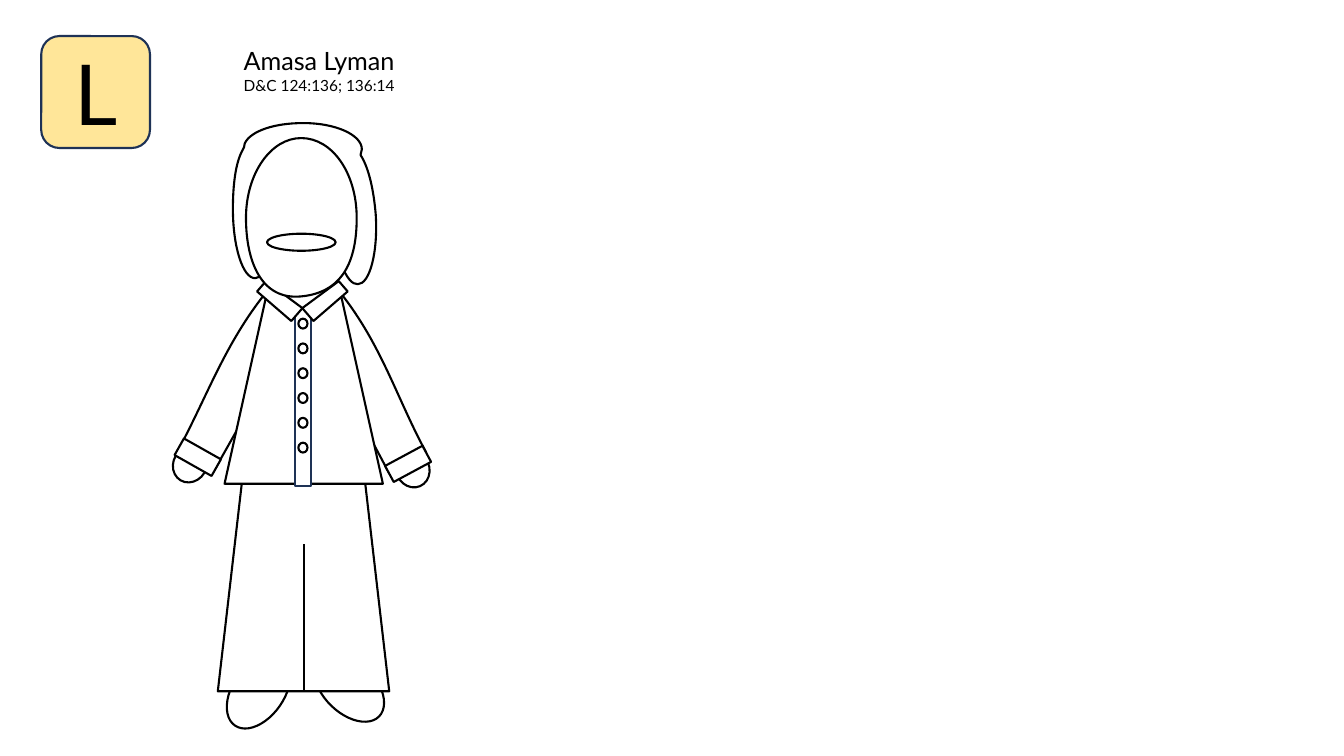
from math import cos, radians, sin

from lxml import etree
from pptx import Presentation
from pptx.dml.color import RGBColor
from pptx.enum.shapes import MSO_CONNECTOR, MSO_SHAPE
from pptx.enum.text import MSO_AUTO_SIZE, PP_ALIGN
from pptx.oxml.ns import qn
from pptx.util import Cm, Pt

BLACK = RGBColor(0x00, 0x00, 0x00)
WHITE = RGBColor(0xFF, 0xFF, 0xFF)
NAVY = RGBColor(0x1E, 0x32, 0x56)
CREAM = RGBColor(0xFF, 0xE6, 0x99)

ELLIPSE = MSO_SHAPE.OVAL
RECTANGLE = MSO_SHAPE.RECTANGLE
ROUNDED = MSO_SHAPE.ROUNDED_RECTANGLE
TRAPEZOID = MSO_SHAPE.TRAPEZOID
COLLAR = MSO_SHAPE.FLOWCHART_MANUAL_INPUT
STRAIGHT = MSO_CONNECTOR.STRAIGHT
FIT_SHAPE = MSO_AUTO_SIZE.SHAPE_TO_FIT_TEXT
LEFT = PP_ALIGN.LEFT
CENTER = PP_ALIGN.CENTER

FONT = "Lato"
OUTLINE = Pt(1.5)
BUTTON_COUNT = 6
BUTTON_PITCH = 0.625

# Outlines in cm from the figure's corner: a pair of numbers is a straight
# step, a triple of points is a Bezier curve
HAIR = [
    (3.35, 0.10),
    ((4.16, 0.10), (4.82, 0.40), (4.82, 0.76)),
    ((4.82, 0.81), (4.82, 0.84), (4.79, 0.89)),
    (4.79, 0.91), (4.82, 0.96),
    ((5.00, 1.27), (5.12, 1.80), (5.17, 2.41)),
    ((5.23, 3.35), (5.02, 4.16), (4.72, 4.16)),
    ((4.44, 4.19), (4.13, 3.43), (4.06, 2.46)),
    ((4.03, 2.11), (4.06, 1.78), (4.08, 1.50)),
    (4.13, 1.29), (3.93, 1.34),
    ((3.75, 1.37), (3.55, 1.39), (3.35, 1.39)),
    ((3.14, 1.39), (2.94, 1.37), (2.76, 1.32)),
    (2.56, 1.27), (2.56, 1.29),
    ((2.63, 1.57), (2.66, 1.90), (2.66, 2.26)),
    ((2.69, 3.22), (2.43, 4.01), (2.13, 4.01)),
    ((1.82, 4.01), (1.57, 3.22), (1.57, 2.26)),
    ((1.57, 1.65), (1.64, 1.11), (1.80, 0.81)),
    (1.85, 0.71), (1.87, 0.61),
    ((2.02, 0.30), (2.61, 0.10), (3.35, 0.10)),
]
RIGHT_ARM = [
    (5.50, 8.91), (3.35, 4.87), (4.29, 4.39),
    ((5.33, 5.71), (5.71, 7.06), (6.44, 8.40)), (5.50, 8.91),
]
LEFT_ARM = [
    (1.08, 8.89), (3.35, 4.87), (2.43, 4.34),
    ((1.36, 5.66), (0.91, 7.03), (0.17, 8.38)), (1.08, 8.89),
]
FACE = [
    (1.90, 2.49),
    ((1.90, 1.37), (2.53, 0.48), (3.29, 0.48)),
    ((4.08, 0.48), (4.69, 1.37), (4.69, 2.49)),
    ((4.69, 3.58), (4.34, 4.37), (3.29, 4.47)),
    ((2.28, 4.57), (1.90, 3.58), (1.90, 2.49)),
]


def paint(shape, fill=WHITE, line=BLACK):
    shape.shadow.inherit = False
    shape.fill.solid()
    shape.fill.fore_color.rgb = fill
    shape.line.color.rgb = line
    shape.line.width = OUTLINE


def add_part(parent, kind, left, top, width, height, turn=0, inset=None,
             mirror=False, **colours):
    shape = parent.shapes.add_shape(kind, Cm(left), Cm(top), Cm(width), Cm(height))
    shape.rotation = turn
    if inset is not None:
        shape.adjustments[0] = inset
    if mirror:
        shape._element.spPr.find(qn("a:xfrm")).set("flipH", "1")
    paint(shape, **colours)


def add_text(parent, left, top, width, height, lines, align=LEFT, color=BLACK):
    """Write (text, size) lines, one paragraph each."""
    box = parent.shapes.add_textbox(Cm(left), Cm(top), Cm(width), Cm(height))
    frame = box.text_frame
    frame.word_wrap = True
    frame.auto_size = FIT_SHAPE
    for index, (text, size) in enumerate(lines):
        para = frame.add_paragraph() if index else frame.paragraphs[0]
        para.alignment = align
        span = para.add_run()
        span.text = text
        span.font.name = FONT
        span.font.size = Pt(size)
        span.font.color.rgb = color


def rotate(x, y, degrees):
    angle = radians(degrees)
    return x * cos(angle) - y * sin(angle), x * sin(angle) + y * cos(angle)


def add_outline(parent, left, top, steps, turn=0):
    """Draw the steps in a frame that is turned by the given degrees."""
    points = []
    for step in steps:
        points.extend(step if len(step) == 3 else [step])
    points = [rotate(Cm(left + x), Cm(top + y), -turn) for x, y in points]
    builder = parent.shapes.build_freeform(*points[0], scale=1.0)
    builder.add_line_segments(points[1:], close=True)
    shape = builder.convert_to_shape()

    # Join each triple of line ends into one curve
    lines = iter(list(shape._element.iter(qn("a:lnTo"))))
    for step in steps[1:]:
        line = next(lines)
        if len(step) == 3:
            curve = etree.Element(qn("a:cubicBezTo"))
            line.addprevious(curve)
            for end in (line, next(lines), next(lines)):
                curve.append(end[0])
                end.getparent().remove(end)

    # Turn the frame back about its own centre
    center_x, center_y = rotate(shape.left + shape.width / 2,
                                shape.top + shape.height / 2, turn)
    shape.left = round(center_x - shape.width / 2)
    shape.top = round(center_y - shape.height / 2)
    shape.rotation = turn
    paint(shape)


def add_badge(page, left, top, width, height):
    badge = page.shapes.add_group_shape()
    add_part(badge, ROUNDED, left, top, width, height, fill=CREAM, line=NAVY)
    letter_width = 1.63
    add_text(badge, left + (width - letter_width) / 2, top, letter_width, height,
             [("L", 60)], align=CENTER)


def add_figure(page, left, top):
    figure = page.shapes.add_group_shape()

    def part(kind, x, y, width, height, **options):
        add_part(figure, kind, left + x, top + y, width, height, **options)

    # Hair, shoes and hands
    add_outline(figure, left, top, HAIR, turn=266.2)
    part(ELLIPSE, 3.85, 13.26, 1.3, 2.11, turn=314.4)
    part(ELLIPSE, 1.57, 13.36, 1.3, 2.11, turn=34.6)
    part(ELLIPSE, 5.68, 8.35, 0.84, 0.94, turn=336.9)
    part(ELLIPSE, 0.07, 8.23, 0.84, 0.94, turn=30.6)

    # Trousers with their seam
    part(TRAPEZOID, 1.19, 8.43, 4.32, 5.99, inset=0.16)
    seam_x = Cm(left + 3.35)
    seam = figure.shapes.add_connector(STRAIGHT, seam_x, Cm(top + 14.42),
                                       seam_x, Cm(top + 10.72))
    seam.line.color.rgb = BLACK
    seam.line.width = OUTLINE
    etree.SubElement(seam._element.spPr, qn("a:effectLst"))

    # Sleeves and cuffs
    add_outline(figure, left, top, RIGHT_ARM, turn=331.7)
    part(TRAPEZOID, 5.45, 8.46, 1.07, 0.46, turn=331.7, inset=0)
    add_outline(figure, left, top, LEFT_ARM, turn=29.4)
    part(TRAPEZOID, 0.15, 8.28, 1.07, 0.48, turn=29.4, inset=0, mirror=True)

    # Shirt, neck, collar and buttons
    part(TRAPEZOID, 1.36, 4.34, 3.99, 4.85, inset=0.27)
    part(RECTANGLE, 3.14, 4.7, 0.41, 4.55, line=NAVY)
    part(ELLIPSE, 2.46, 3.4, 1.7, 1.37)
    part(COLLAR, 2.18, 4.34, 1.14, 0.43, turn=40.8)
    part(COLLAR, 3.32, 4.34, 1.14, 0.43, turn=319.2, mirror=True)
    for index in range(BUTTON_COUNT):
        part(ELLIPSE, 3.22, 5.03 + index * BUTTON_PITCH, 0.23, 0.25)

    # Face and mouth
    add_outline(figure, left, top, FACE)
    part(ELLIPSE, 2.43, 2.89, 1.73, 0.43)


def main():
    deck = Presentation()
    deck.slide_width, deck.slide_height = Cm(33.87), Cm(19.05)
    page = deck.slides.add_slide(deck.slide_layouts[6])
    add_badge(page, 1.04, 0.91, 2.74, 2.82)
    add_text(page, 5.89, 1.02, 4.95, 1.5,
             [("Amasa Lyman", 18), ("D&C 124:136; 136:14", 11)])
    add_figure(page, 4.3, 3)
    deck.save("out.pptx")


if __name__ == "__main__":
    main()
